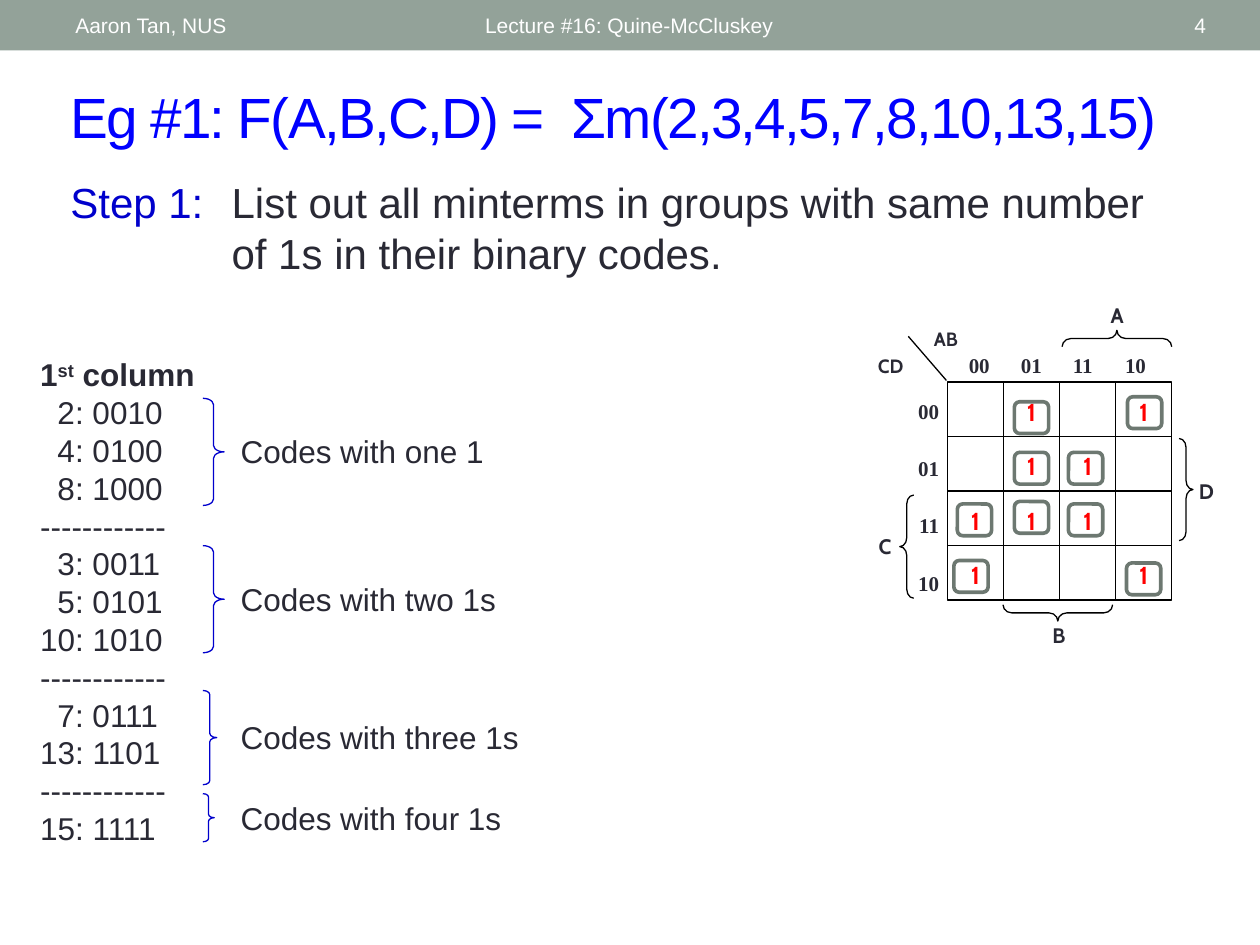
from pptx import Presentation
from pptx.dml.color import RGBColor
from pptx.enum.shapes import MSO_CONNECTOR, MSO_SHAPE as Shape
from pptx.enum.text import MSO_ANCHOR as Anchor, PP_ALIGN as Align
from pptx.oxml.ns import qn
from pptx.util import Cm, Pt
from lxml.etree import SubElement

COLORS = {
    "bar": "93A299", "title": "0000FF", "step": "0000CC", "ink": "292934",
    "white": "FFFFFF", "black": "000000", "one": "FF0000", "ring": "6D7871",
}
COLORS = {name: RGBColor.from_string(value) for name, value in COLORS.items()}

deck = Presentation()
deck.slide_width, deck.slide_height = Cm(25.4), Cm(19.05)
page = deck.slides.add_slide(deck.slide_layouts[6])


def add_text(text, place, size, color="ink", font="Arial", bold=False,
             align=Align.LEFT, anchor=Anchor.TOP):
    box = page.shapes.add_textbox(*map(Cm, place))
    frame = box.text_frame
    frame.word_wrap = True
    frame.vertical_anchor = anchor
    frame.text = text
    for para in frame.paragraphs:
        para.alignment = align
        for span in para.runs:
            span.font.size = Pt(size)
            span.font.name = font
            span.font.bold = bold
            span.font.color.rgb = COLORS[color]
    return frame


def add_outline(kind, place, color, width=0.75):
    shape = page.shapes.add_shape(kind, *map(Cm, place))
    shape.shadow.inherit = False
    shape.fill.background()
    shape.line.color.rgb = COLORS[color]
    shape.line.width = Pt(width)
    return shape


bar = page.shapes.add_shape(Shape.RECTANGLE, 0, 0, deck.slide_width, Cm(1.02))
bar.shadow.inherit = False
bar.fill.solid()
bar.fill.fore_color.rgb = COLORS["bar"]
bar.line.fill.background()

for text, left, width, align in [
    ("Aaron Tan, NUS", 1.27, 8.05, Align.LEFT),
    ("Lecture #16: Quine-McCluskey", 9.53, 11.43, Align.LEFT),
    ("4", 22.15, 2.41, Align.RIGHT),
]:
    add_text(text, (left, 0.05, width, 0.91), 12, "white", align=align, anchor=Anchor.MIDDLE)

title = add_text("Eg #1: F(A,B,C,D) =  Σm(2,3,4,5,7,8,10,13,15)",
                 (1.17, 1.45, 23.39, 1.78), 32.4, "title", anchor=Anchor.MIDDLE)
title.paragraphs[0].runs[0].font._element.set("spc", "-100")

step = add_text("", (1.17, 3.45, 22.28, 2.34), 24).paragraphs[0]
step.line_spacing = Pt(28.6)
for text, color in [
    ("Step 1:", "step"),
    ("\tList out all minterms in groups with same number of 1s in their binary codes.", "ink"),
]:
    span = step.add_run()
    span.text = text
    span.font.size = Pt(24)
    span.font.name = "Arial"
    span.font.color.rgb = COLORS[color]
hanging = step._p.get_or_add_pPr()
hanging.set("marL", str(Cm(3.25)))
hanging.set("indent", str(-Cm(3.25)))

map_left, map_top, cell_width, cell_height = 19.1, 7.7, 1.13, 1.1
map_right, map_bottom = map_left + 4 * cell_width, map_top + 4 * cell_height
add_outline(Shape.RECTANGLE, (map_left, map_top, 4 * cell_width, 4 * cell_height), "black")
lines = [(19.08, 7.67, 18.31, 6.78)]
for index in range(1, 4):
    x, y = map_left + index * cell_width, map_top + index * cell_height
    lines += [(x, map_top, x, map_bottom), (map_left, y, map_right, y)]
for ends in lines:
    line = page.shapes.add_connector(MSO_CONNECTOR.STRAIGHT, *map(Cm, ends))
    line.line.color.rgb = COLORS["black"]
    line.line.width = Pt(0.75)
    SubElement(line._element.spPr, qn("a:effectLst"))

for kind, place, turn, bend in [
    (Shape.LEFT_BRACE, (18.14, 9.98, 0.28, 2.08), 0, 0.64),
    (Shape.LEFT_BRACE, (22.35, 5.72, 0.33, 2.21), 90, 0.54),
    (Shape.LEFT_BRACE, (21.16, 11.25, 0.33, 2.21), 270, 0.54),
    (Shape.RIGHT_BRACE, (23.77, 8.84, 0.28, 2.06), 0, 0.64),
]:
    brace = add_outline(kind, place, "black")
    brace.rotation = turn
    brace.adjustments[0] = bend

for text, left, top, width, size in [
    ("A", 22.1, 5.97, 0.84, 12), ("B", 20.93, 12.42, 0.84, 12),
    ("C", 17.42, 10.64, 0.84, 12), ("D", 23.9, 9.53, 0.84, 12),
    ("CD", 17.17, 7.01, 1.57, 11), ("AB", 18.42, 6.48, 1.3, 11),
]:
    add_text(text, (left, top, width, 0.74), size, font="Cabin", bold=True, align=Align.CENTER)

codes = ["00", "01", "11", "10"]
row_labels = add_text("\n".join(codes), (18.19, 7.9, 0.99, 4.55), 12,
                      font="Times New Roman", bold=True, align=Align.RIGHT)
for para in row_labels.paragraphs:
    para.space_after = Pt(18.4)
column_labels = add_text("\t".join(codes), (19.28, 6.99, 4.4, 0.89), 12,
                         font="Times New Roman", bold=True)

for para, stops in [(step, [3.25]), (column_labels.paragraphs[0], [1.05, 2.1, 3.15])]:
    tabs = SubElement(para._p.get_or_add_pPr(), qn("a:tabLst"))
    for stop in stops:
        SubElement(tabs, qn("a:tab"), pos=str(Cm(stop)), algn="l")

for row, column, ring_left, ring_top in [
    (0, 1, 20.45, 8.1), (0, 3, 22.73, 8),
    (1, 1, 20.45, 9.12), (1, 2, 21.54, 9.12),
    (2, 0, 19.3, 10.16), (2, 1, 20.45, 10.11), (2, 2, 21.54, 10.16),
    (3, 0, 19.23, 11.3), (3, 3, 22.71, 11.35),
]:
    place = (map_left + column * cell_width, map_top + 0.17 + row * cell_height, cell_width, 0.89)
    add_text("1", place, 14, "one", "Cabin", True, Align.CENTER)
    add_outline(Shape.ROUNDED_RECTANGLE, (ring_left, ring_top, 0.69, 0.64), "ring", 2.08)

divider = "------------"
minterms = ["1", "2: 0010", "4: 0100", "8: 1000", divider, "3: 0011", "5: 0101", "10: 1010",
            divider, "7: 0111", "13: 1101", divider, "15: 1111"]
column = add_text("\n".join(minterms), (0.56, 7.04, 3.81, 10.26), 18)
for para in column.paragraphs:
    para.line_spacing = Pt(21.6)
    if para.text[1:2] == ":":
        para._p.get_or_add_pPr().set("marL", str(Cm(0.35)))
heading = column.paragraphs[0]
for text in ["st", " column"]:
    heading.add_run().text = text
for span in heading.runs:
    span.font.size = Pt(18)
    span.font.name = "Arial"
    span.font.bold = True
    span.font.color.rgb = COLORS["ink"]
heading.runs[1].font._element.set("baseline", "30000")

for count, brace_top, width, height, text_top in [
    ("one 1", 8.03, 0.43, 2.16, 8.59),
    ("two 1s", 11, 0.43, 2.16, 11.56),
    ("three 1s", 13.92, 0.28, 1.9, 14.35),
    ("four 1s", 16, 0.23, 0.97, 15.98),
]:
    brace = add_outline(Shape.RIGHT_BRACE, (4.09, brace_top, width, height), "step")
    brace.adjustments[0] = 0.3
    add_text(f"Codes with {count}", (4.6, text_top, 6.35, 1.02), 18)

deck.save("out.pptx")
